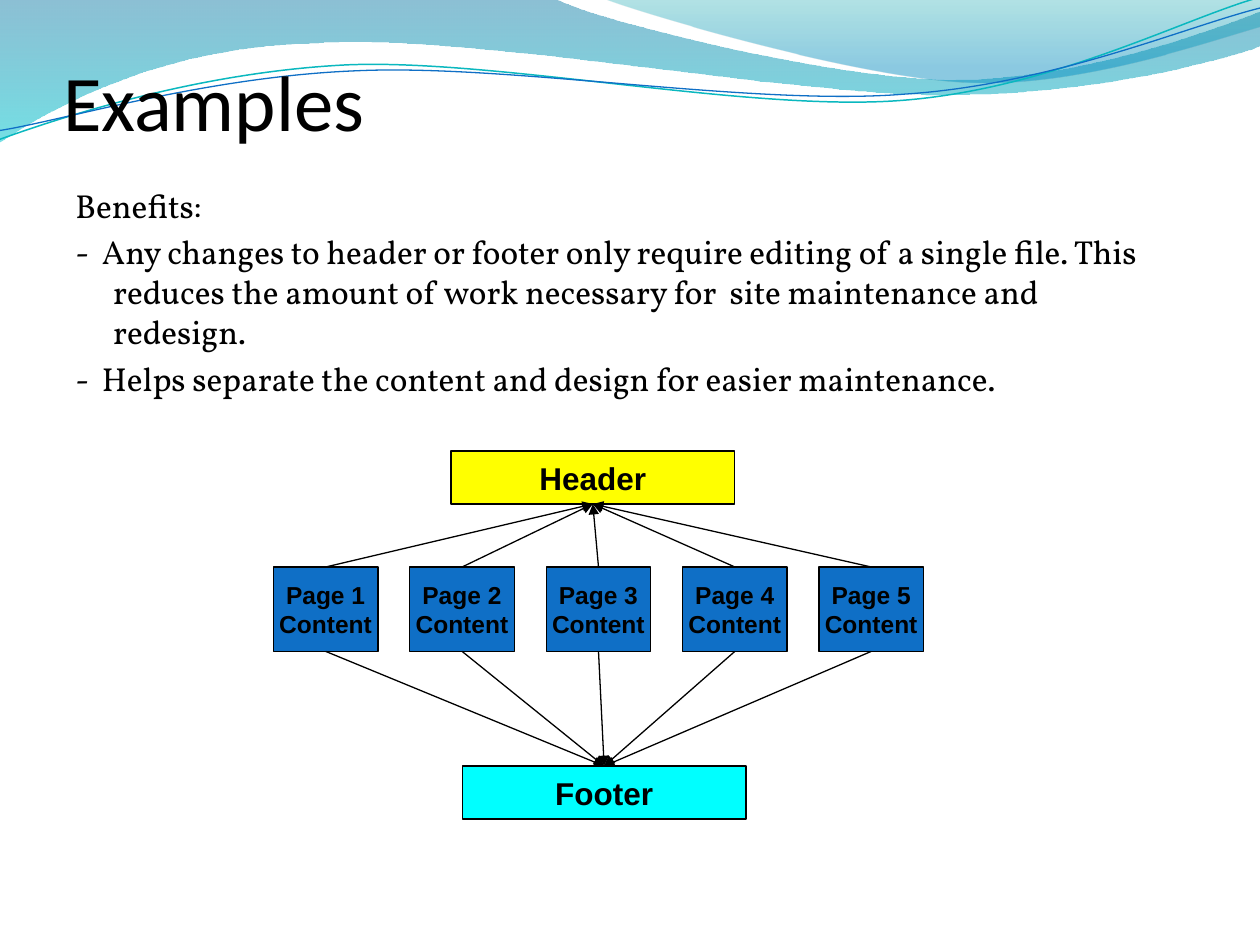
from lxml.etree import Element, SubElement
from pptx import Presentation
from pptx.dml.color import RGBColor
from pptx.enum.shapes import MSO_CONNECTOR as Connector, MSO_SHAPE as Shape
from pptx.enum.text import MSO_ANCHOR as Anchor, PP_ALIGN as Align
from pptx.oxml.ns import qn
from pptx.util import Inches, Pt

BLACK = RGBColor(0x00, 0x00, 0x00)
BLUE = RGBColor(0x0F, 0x6F, 0xC6)
YELLOW = RGBColor(0xFF, 0xFF, 0x00)
CYAN = RGBColor(0x00, 0xFF, 0xFF)
TEAL = RGBColor(0x0A, 0xB8, 0xBF)
DEEP_BLUE = RGBColor(0x00, 0x74, 0xA1)
AQUA = RGBColor(0x00, 0xC6, 0xCF)
SEA_GREEN = RGBColor(0x00, 0xA1, 0xA9)
SKY_BLUE = RGBColor(0x00, 0x8B, 0xBF)

# Each outline is a list of points (two numbers) and Bezier curves (six numbers).
# Each gradient stop is position, colour, opacity in percent.
WAVES = [
    ([(0, 0), (4.4, -0.01), (4.76, 0.17, 6.64, 0.63, 7.58, 0.63),
      (8.53, 0.63, 9.58, 0.26, 10, 0.09), (10.01, 0.36),
      (9.83, 0.44, 8.7, 0.76, 7.46, 0.75), (6.22, 0.75, 3.82, 0.28, 2.57, 0.34),
      (1.29, 0.36, 0.46, 0.83, -0.01, 1.13)],
     [(0, DEEP_BLUE, 45), (1, AQUA, 55)]),
    ([(4.79, -0.01), (5.09, 0.11, 6.82, 0.62, 7.69, 0.65),
      (8.56, 0.69, 9.61, 0.32, 10, 0.21), (10, 0)],
     [(0, SEA_GREEN, 30), (0.8, SKY_BLUE, 45)]),
]
RIPPLES = [
    ([(-0.02, 0.87), (0.47, 0.72, 1.58, 0.41, 2.77, 0.41),
      (3.96, 0.42, 5.91, 0.93, 7.12, 0.9), (8.32, 0.87, 9.4, 0.36, 10, 0.22)],
     TEAL, 0.85),
    ([(-0.02, 0.8), (0.46, 0.75, 1.64, 0.45, 2.83, 0.46),
      (4.03, 0.46, 5.96, 0.89, 7.16, 0.85), (8.35, 0.83, 9.42, 0.42, 10.02, 0.3)],
     BLUE, 0.75),
]
RIPPLE_ROTATION = 357.3
BENEFITS = [
    "Benefits:",
    "-  Any changes to header or footer only require editing of a single file. "
    "This reduces the amount of work necessary for  site maintenance and redesign.",
    "-  Helps separate the content and design for easier maintenance.",
]
PAGE_COUNT = 5


def add_outline(shapes, outline, left, top, close):
    """Build a freeform through the end points, then bend its curved segments."""
    ends = [(left + Inches(part[-2]), top + Inches(part[-1])) for part in outline]
    builder = shapes.build_freeform(*ends[0])
    builder.add_line_segments(ends[1:], close=close)
    shape = builder.convert_to_shape()
    shape.shadow.inherit = False
    segments = list(shape.element.iter(qn("a:lnTo")))
    for segment, part in zip(segments, outline[1:]):
        if len(part) == 2:
            continue
        segment.tag = qn("a:cubicBezTo")
        for i in (0, 1):
            control = Element(qn("a:pt"))
            control.set("x", str(left + Inches(part[2 * i]) - shape.left))
            control.set("y", str(top + Inches(part[2 * i + 1]) - shape.top))
            segment.insert(i, control)
    return shape


def add_wave_banner(slide, left, top):
    for outline, stops in WAVES:
        wave = add_outline(slide.shapes, outline, left, top, close=True)
        wave.line.fill.background()
        wave.fill.gradient()
        wave.fill.gradient_angle = 270
        for stop, (position, color, _) in zip(wave.fill.gradient_stops, stops):
            stop.position = position
            stop.color.rgb = color
        gradient = wave.element.find(".//" + qn("a:gradFill"))
        for color, (_, _, opacity) in zip(gradient.iter(qn("a:srgbClr")), stops):
            SubElement(color, qn("a:alpha")).set("val", str(opacity * 1000))
    group = slide.shapes.add_group_shape()
    for outline, color, width in RIPPLES:
        ripple = add_outline(group.shapes, outline, left, top, close=False)
        ripple.rotation = RIPPLE_ROTATION
        ripple.fill.background()
        ripple.line.color.rgb = color
        ripple.line.width = Pt(width)


def format_paragraph(paragraph, font_name, size, bold=False):
    for run in paragraph.runs:
        run.font.name = font_name
        run.font.size = Pt(size)
        run.font.bold = bold
        run.font.color.rgb = BLACK


def place_title(slide, text, left, top, width, height):
    title = slide.shapes.title
    title.left, title.top, title.width, title.height = left, top, width, height
    title.element.getparent().append(title.element)  # in front of the banner
    frame = title.text_frame
    frame.text = text
    frame.vertical_anchor = Anchor.BOTTOM
    frame.margin_left = frame.margin_right = frame.margin_bottom = 0
    frame.margin_top = Inches(0.05)
    frame.paragraphs[0].alignment = Align.LEFT
    format_paragraph(frame.paragraphs[0], "Calibri", 45)


def add_benefits(slide, left, top, width, height):
    frame = slide.shapes.add_textbox(left, top, width, height).text_frame
    frame.word_wrap = True
    frame.text = "\n".join(BENEFITS)
    for paragraph in frame.paragraphs:
        paragraph.space_before = Pt(3.8)
        properties = paragraph._p.get_or_add_pPr()
        properties.set("marL", str(Inches(0.3)))
        properties.set("indent", str(-Inches(0.3)))
        format_paragraph(paragraph, "Vollkorn", 19)


def add_block(shapes, text, size, color, left, top, width, height):
    block = shapes.add_shape(Shape.RECTANGLE, left, top, width, height)
    block.shadow.inherit = False
    block.fill.solid()
    block.fill.fore_color.rgb = color
    block.line.color.rgb = BLACK
    block.line.width = Pt(0.75)
    frame = block.text_frame
    frame.word_wrap = False
    frame.vertical_anchor = Anchor.MIDDLE
    frame.text = text
    for paragraph in frame.paragraphs:
        paragraph.alignment = Align.CENTER
        format_paragraph(paragraph, "Arial", size, bold=True)
    return block


def add_arrow(shapes, start, end):
    arrow = shapes.add_connector(Connector.STRAIGHT, *start, *end)
    arrow.line.color.rgb = BLACK
    arrow.line.width = Pt(0.75)
    SubElement(arrow.line._get_or_add_ln(), qn("a:tailEnd")).set("type", "triangle")
    SubElement(arrow.element.spPr, qn("a:effectLst"))


def add_include_diagram(slide, left, top, width, height):
    """Draw a row of pages that all point to one header and one footer."""
    shapes = slide.shapes.add_group_shape().shapes
    bar_width, bar_height = Inches(2.25), Inches(0.42)
    page_width, page_height = Inches(0.83), Inches(0.67)
    page_top = top + Inches(0.92)
    pitch = (width - page_width) / (PAGE_COUNT - 1)
    pages = [add_block(shapes, f"Page {i + 1}\nContent", 14, BLUE,
                       left + round(i * pitch), page_top, page_width, page_height)
             for i in range(PAGE_COUNT)]
    header = add_block(shapes, "Header", 18, YELLOW,
                       left + Inches(1.41), top, bar_width, bar_height)
    footer = add_block(shapes, "Footer", 18, CYAN, left + Inches(1.5),
                       top + height - bar_height, bar_width, bar_height)
    header_end = (header.left + bar_width // 2, header.top + bar_height)
    footer_end = (footer.left + bar_width // 2, footer.top)
    for start_y, end in ((page_top, header_end), (page_top + page_height, footer_end)):
        for page in pages:
            add_arrow(shapes, (page.left + page_width // 2, start_y), end)


def main():
    presentation = Presentation()
    presentation.slide_width, presentation.slide_height = Inches(10), Inches(7.5)
    slide = presentation.slides.add_slide(presentation.slide_layouts[5])
    add_wave_banner(slide, Inches(0), Inches(0))
    place_title(slide, "Examples", Inches(0.5), Inches(0.3), Inches(9), Inches(0.87))
    add_benefits(slide, Inches(0.5), Inches(1.42), Inches(8.75), Inches(2.08))
    add_include_diagram(slide, Inches(2.17), Inches(3.58), Inches(5.16), Inches(2.92))
    presentation.save("out.pptx")


if __name__ == "__main__":
    main()
